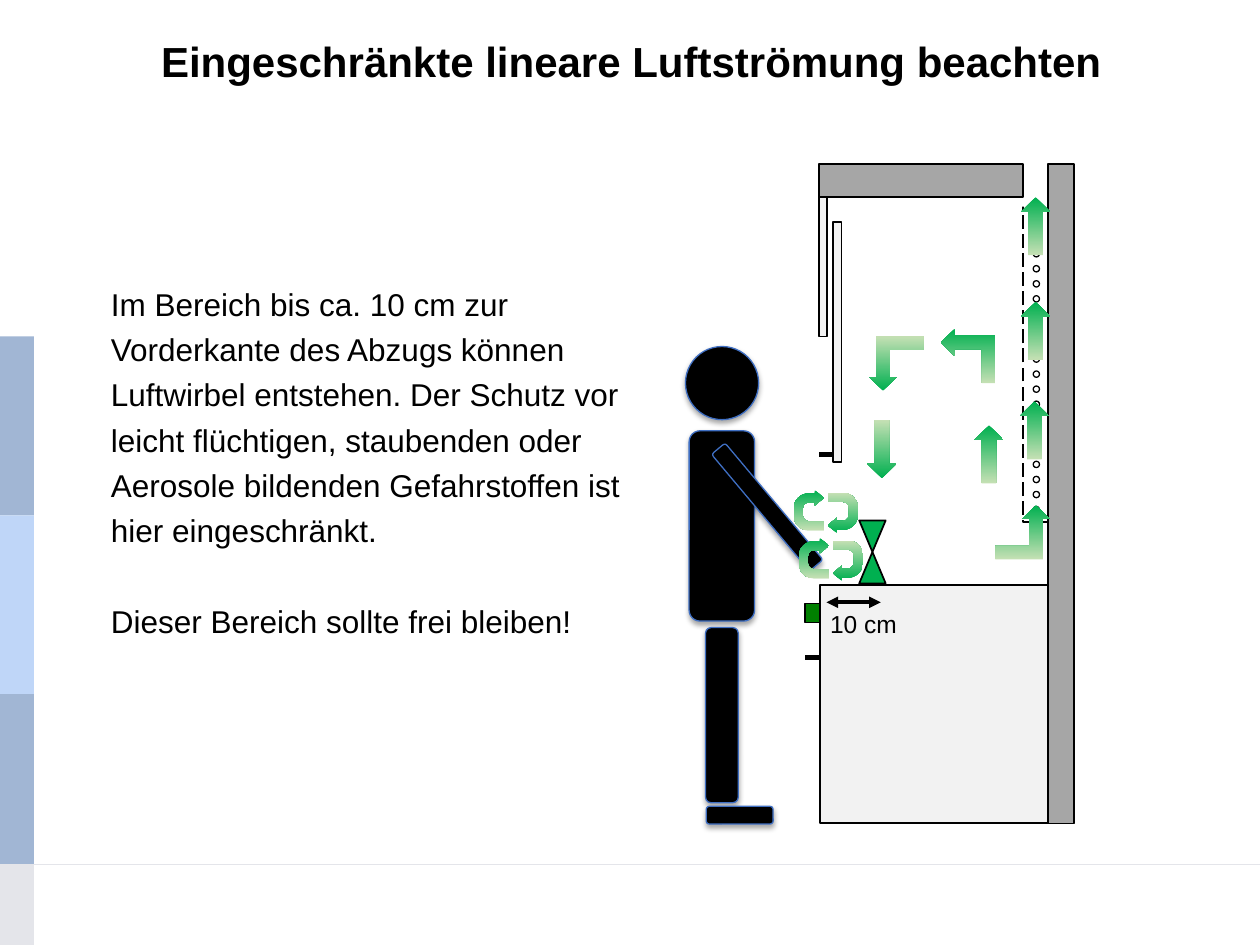
"""Build a slide on restricted linear airflow in a fume cupboard."""
from lxml import etree
from pptx import Presentation
from pptx.dml.color import RGBColor
from pptx.enum import dml, shapes, text
from pptx.oxml.ns import qn
from pptx.util import Pt

THEME = {
    "font": "Arial", "title": 24, "body": 18, "label": 14,
    "black": "000000", "white": "FFFFFF", "wall": "A6A6A6", "panel": "F2F2F2",
    "green": "00B050", "pale green": "C5E0B4", "switch": "008000",
    "outline": "3F6FC3", "stripe": "A1B6D4", "light stripe": "BFD6F8", "rule": "E4E5EA",
}
KIND = shapes.MSO_SHAPE
TITLE = "Eingeschränkte lineare Luftströmung beachten"
BODY = [
    "Im Bereich bis ca. 10 cm zur Vorderkante des Abzugs können Luftwirbel entstehen. "
    "Der Schutz vor leicht flüchtigen, staubenden oder Aerosole bildenden Gefahrstoffen "
    "ist hier eingeschränkt.",
    "Dieser Bereich sollte frei bleiben!",
]
DISTANCE = "10 cm"
STRIPE_TOPS = [192.2, 294.5, 396.7, 493.9, 540]
STRIPE_COLORS = ["stripe", "light stripe", "stripe", "rule"]

SAMPLE = (KIND.FLOWCHART_COLLATE, (491, 297.4, 15.1, 36), "green")
CABINET = [
    ((468.7, 334.1, 130.3, 136.1), "panel"),
    ((475.9, 126.7, 5, 137.5), "panel"),
    ((468, 112.3, 4.5, 80), "panel"),
    ((460.1, 344.9, 8.6, 10.8), "switch"),
]
DUCT = (584.6, 117.4, 14.4, 180.7)
DUCT_OPENING = (583.9, 79.2, 14.4, 38.9)
WALLS = [(599, 93.6, 14.7, 377), (468, 93.6, 116.6, 19.1)]
HOLE_LEFT, HOLE_TOP, HOLE_SIZE, HOLE_PITCH, HOLE_COUNT = 590.4, 117.4, 3.6, 8.6, 21
HANDLES = [(468, 259.9, 475.9), (460.1, 375.8, 468.7)]

STRAIGHT_FLOW = [
    ((574.6, 237.6), 270), ((575.3, 180.7), 270), ((575.3, 121), 270),
    ((548.6, 251.3), 270), ((487.4, 248.4), 90),
]
BENT_FLOW = [
    ((568.8, 288.7), 0, 90), ((537.8, 187.9), 270, 180), ((496.8, 192.2), 180, 90),
]
VORTICES = [(450.7, 283), (453.6, 310.3)]
VORTEX_HALVES = [(19.4, 1.4, 90), (0, 0, 270)]
UTURN = [0.3, 0.25, 0.3, 0.5, 1]
PERSON = [
    (KIND.OVAL, (391.7, 198, 41.8, 41.8), 0),
    (KIND.ROUNDED_RECTANGLE, (393.8, 246.2, 37.4, 108.7), 0),
    (KIND.ROUNDED_RECTANGLE, (403.2, 358.6, 18.7, 100.1), 0),
    (KIND.ROUNDED_RECTANGLE, (433.4, 246.2, 10.1, 87.1), 320),
    (KIND.ROUNDED_RECTANGLE, (403.6, 460.8, 38.2, 10.1), 0),
]


def color(name):
    return RGBColor.from_string(THEME[name])


def place(shape, box):
    shape.left, shape.top, shape.width, shape.height = map(Pt, box)


def add_shape(parent, kind, box, fill=None, line=None, width=1, rotation=0):
    shape = parent.add_shape(kind, *map(Pt, box))
    shape.shadow.inherit = False
    shape.rotation = rotation
    if fill:
        shape.fill.solid()
        shape.fill.fore_color.rgb = color(fill)
    else:
        shape.fill.background()
    if line:
        shape.line.color.rgb = color(line)
        shape.line.width = Pt(width)
    else:
        shape.line.fill.background()
    return shape


def add_flow(parent, kind, box, rotation, angle=180):
    arrow = add_shape(parent, kind, box, rotation=rotation)
    arrow.fill.gradient()
    arrow.fill.gradient_angle = 360 - angle
    for stop, name in zip(arrow.fill.gradient_stops, ("green", "pale green")):
        stop.color.rgb = color(name)
    return arrow


def add_line(parent, start, end, name, width, heads=()):
    line = parent.add_connector(shapes.MSO_CONNECTOR.STRAIGHT, *map(Pt, start + end))
    line.line.color.rgb = color(name)
    line.line.width = Pt(width)
    for head in heads:
        etree.SubElement(line.line._get_or_add_ln(), qn(head), type="triangle")
    etree.SubElement(line._element.spPr, qn("a:effectLst"))


def add_soft_shadow(shape):
    effects = shape._element.spPr.find(qn("a:effectLst"))
    shadow = etree.SubElement(effects, qn("a:outerShdw"), blurRad=str(Pt(3.1)),
                              dist=str(Pt(1.8)), dir="5400000", rotWithShape="0")
    tint = etree.SubElement(shadow, qn("a:srgbClr"), val=THEME["black"])
    etree.SubElement(tint, qn("a:alpha"), val="35000")


def style(paragraph, size, bold=False):
    font = paragraph.font
    font.name, font.size, font.bold = THEME["font"], Pt(THEME[size]), bold
    font.color.rgb = color("black")


def write_text(slide):
    title, body = slide.placeholders
    place(title, (78.5, 16.6, 564.5, 36))
    title.text_frame.text = TITLE
    title.text_frame.paragraphs[0].alignment = text.PP_ALIGN.CENTER
    style(title.text_frame.paragraphs[0], "title", True)

    place(body, (56.2, 154.8, 329, 216.7))
    body.text_frame.text = "\n".join(BODY)
    for index, paragraph in enumerate(body.text_frame.paragraphs):
        properties = paragraph._p.get_or_add_pPr()
        properties.set("marL", "0")
        properties.set("indent", "0")
        etree.SubElement(properties, qn("a:buNone"))
        paragraph.line_spacing = 1.2
        paragraph.space_before = Pt(26 * index)
        style(paragraph, "body")


def draw_frame(parent):
    for top, bottom, name in zip(STRIPE_TOPS, STRIPE_TOPS[1:], STRIPE_COLORS):
        add_shape(parent, KIND.RECTANGLE, (0, top, 19.4, bottom - top), name)
    add_line(parent, (0, 493.9), (720, 493.9), "rule", 0.5)


def draw_cabinet(parent):
    add_shape(parent, *SAMPLE, "black")
    for box, fill in CABINET:
        add_shape(parent, KIND.RECTANGLE, box, fill, "black")
    for left, y, right in HANDLES:
        add_line(parent, (left, y), (right, y), "black", 3)
    duct = add_shape(parent, KIND.RECTANGLE, DUCT, "white", "black")
    duct.line.dash_style = dml.MSO_LINE.LONG_DASH
    add_shape(parent, KIND.RECTANGLE, DUCT_OPENING, "white")
    for box in WALLS:
        add_shape(parent, KIND.RECTANGLE, box, "wall", "black")
    for index in range(HOLE_COUNT):
        top = HOLE_TOP + index * HOLE_PITCH
        add_shape(parent, KIND.OVAL, (HOLE_LEFT, top, HOLE_SIZE, HOLE_SIZE),
                  line="black", width=0.75)


def draw_person(parent):
    person = parent.add_group_shape().shapes
    for kind, box, rotation in PERSON:
        add_soft_shadow(add_shape(person, kind, box, "black", "outline", 0.75, rotation))


def draw_airflow(parent):
    for corner, rotation in STRAIGHT_FLOW:
        add_flow(parent, KIND.RIGHT_ARROW, corner + (33.1, 16.6), rotation)
    for corner, rotation, angle in BENT_FLOW:
        add_flow(parent, KIND.BENT_UP_ARROW, corner + (31, 31), rotation, angle)
    for left, top in VORTICES:
        vortex = parent.add_group_shape().shapes
        for dx, dy, rotation in VORTEX_HALVES:
            arrow = add_flow(vortex, KIND.U_TURN_ARROW, (left + dx, top + dy, 23, 17.3), rotation)
            for index, value in enumerate(UTURN):
                arrow.adjustments[index] = value


def draw_distance(parent):
    add_line(parent, (472.3, 344.2), (503.3, 344.2), "black", 2.25, ("a:headEnd", "a:tailEnd"))
    label = parent.add_textbox(*map(Pt, (467.3, 344.2, 52.6, 24.5)))
    label.text_frame.word_wrap = False
    label.text_frame.text = DISTANCE
    style(label.text_frame.paragraphs[0], "label")


def main():
    presentation = Presentation()
    presentation.slide_width, presentation.slide_height = Pt(720), Pt(540)
    slide = presentation.slides.add_slide(presentation.slide_layouts[1])
    write_text(slide)
    for draw in (draw_frame, draw_cabinet, draw_person, draw_airflow, draw_distance):
        draw(slide.shapes)
    presentation.save("out.pptx")


if __name__ == "__main__":
    main()
